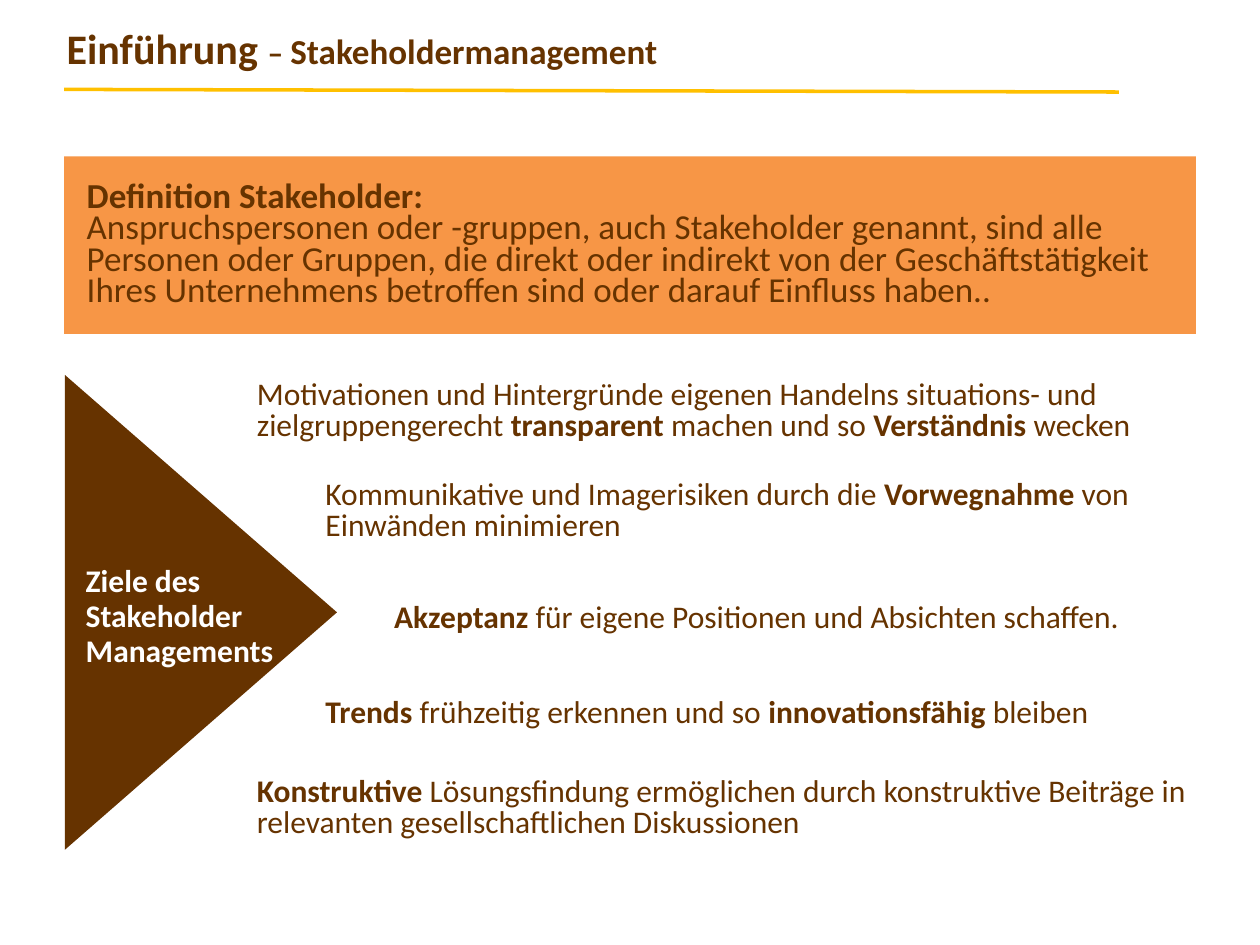
from lxml import etree
from pptx import Presentation, util as u
from pptx.dml.color import RGBColor
from pptx.enum import shapes, text
from pptx.oxml.ns import qn

HUES = {"brown": "663300", "gold": "FFC000", "orange": "F79646", "white": "FFFFFF"}
KIND = shapes.MSO_SHAPE


class Deck:
    """Holds the style and the current slide."""
    face = "Calibri"

    def __init__(self, wide, high):
        self.prs = Presentation()
        self.prs.slide_width, self.prs.slide_height = u.Pt(wide), u.Pt(high)
        self.slide = self.prs.slides.add_slide(self.prs.slide_layouts[6])

    def hue(self, name):
        return RGBColor.from_string(HUES[name])

    def shape(self, kind, box, fill, turn=0):
        item = self.slide.shapes.add_shape(kind, *map(u.Pt, box))
        item.shadow.inherit = False
        item.fill.solid()
        item.fill.fore_color.rgb = self.hue(fill)
        item.line.fill.background()
        item.rotation = turn
        return item

    def line(self, ends, hue, width):
        item = self.slide.shapes.add_connector(
            shapes.MSO_CONNECTOR.STRAIGHT, *map(u.Pt, ends))
        item.line.color.rgb = self.hue(hue)
        item.line.width = u.Pt(width)
        etree.SubElement(item._element.spPr, qn("a:effectLst"))

    def words(self, item, paras, space=None, hue="brown", **form):
        """Each paragraph is a list of (words, size, bold); a newline breaks the line."""
        frame = item.text_frame
        for key, value in form.items():
            setattr(frame, key, value)
        for i, runs in enumerate(paras):
            para = frame.add_paragraph() if i else frame.paragraphs[0]
            para.alignment = text.PP_ALIGN.LEFT
            if space:
                para.line_spacing = space
            for words, size, bold in runs:
                for j, part in enumerate(words.split("\n")):
                    if j:
                        para.add_line_break()
                    run = para.add_run()
                    run.text = part
                    look = {"name": self.face, "size": u.Pt(size), "bold": bold}
                    for key, value in look.items():
                        setattr(run.font, key, value)
                    run.font.color.rgb = self.hue(hue)

    def label(self, box, paras, space=None, **form):
        item = self.slide.shapes.add_textbox(*map(u.Pt, box))
        self.words(item, paras, space, word_wrap=True,
                   auto_size=text.MSO_AUTO_SIZE.SHAPE_TO_FIT_TEXT, **form)


def main():
    deck = Deck(720, 540)
    tight = u.Pt(18)

    # Title and rule
    deck.label((31, 9.4, 622, 36), [[("Einführung ", 24, True), ("– ", 18, True),
                                     ("Stakeholdermanagement", 20, True)]])
    deck.line((36.7, 51.1, 639.4, 52.6), "gold", 2)

    # Triangle pointing right
    deck.shape(KIND.ISOSCELES_TRIANGLE, (-20.9, 272.2, 271.4, 155.5), "brown", 90)

    # Definition
    deck.shape(KIND.RECTANGLE, (36.7, 89.3, 646.6, 101.5), "orange")
    deck.label((42.5, 83.5, 623.5, 98.6), [
        [("Definition Stakeholder:", 20, True)],
        [("Anspruchspersonen oder -gruppen, auch Stakeholder genannt, sind alle "
          "Personen oder Gruppen, die direkt oder indirekt von der Geschäftstätigkeit "
          "Ihres Unternehmens betroffen sind oder darauf Einfluss haben..", 20, False)],
    ], tight, margin_top=u.Pt(21.6))

    # Caption on the triangle
    cap = deck.shape(KIND.RECTANGLE, (43.2, 336.2, 96.5, 33.1), "brown")
    deck.words(cap, [[("Ziele des \nStakeholder \nManagements", 18, True)]], 0.93, "white",
               word_wrap=False, vertical_anchor=text.MSO_ANCHOR.MIDDLE,
               margin_left=u.Pt(5.8), margin_top=0, margin_right=0, margin_bottom=0)

    # Goals: step, top, width, height, spacing, words in turn plain and bold
    goals = [
        (0, 213.8, 555, 44, tight,
         ["Motivationen und Hintergründe eigenen Handelns situations- und "
          "zielgruppengerecht ", "transparent", " machen und so ", "Verständnis", " wecken"]),
        (1, 270.7, 533, 44, tight,
         ["Kommunikative und Imagerisiken durch die ", "Vorwegnahme",
          " von \nEinwänden minimieren"]),
        (2, 337.7, 502, 29, None,
         ["", "Akzeptanz", " für eigene Positionen und Absichten schaffen."]),
        (1, 395.3, 533, 26, tight,
         ["", "Trends", " frühzeitig erkennen und so ", "innovationsfähig", " bleiben"]),
        (0, 440.6, 555, 44, tight,
         ["", "Konstruktive", " Lösungsfindung ermöglichen durch konstruktive Beiträge in "
          "relevanten gesellschaftlichen Diskussionen"]),
    ]
    for step, top, wide, high, space, parts in goals:
        runs = [(part, 18, i % 2 == 1) for i, part in enumerate(parts) if part]
        deck.label((139.7 + 39.2 * step, top, wide, high), [runs], space)

    deck.prs.save("out.pptx")


if __name__ == "__main__":
    main()
